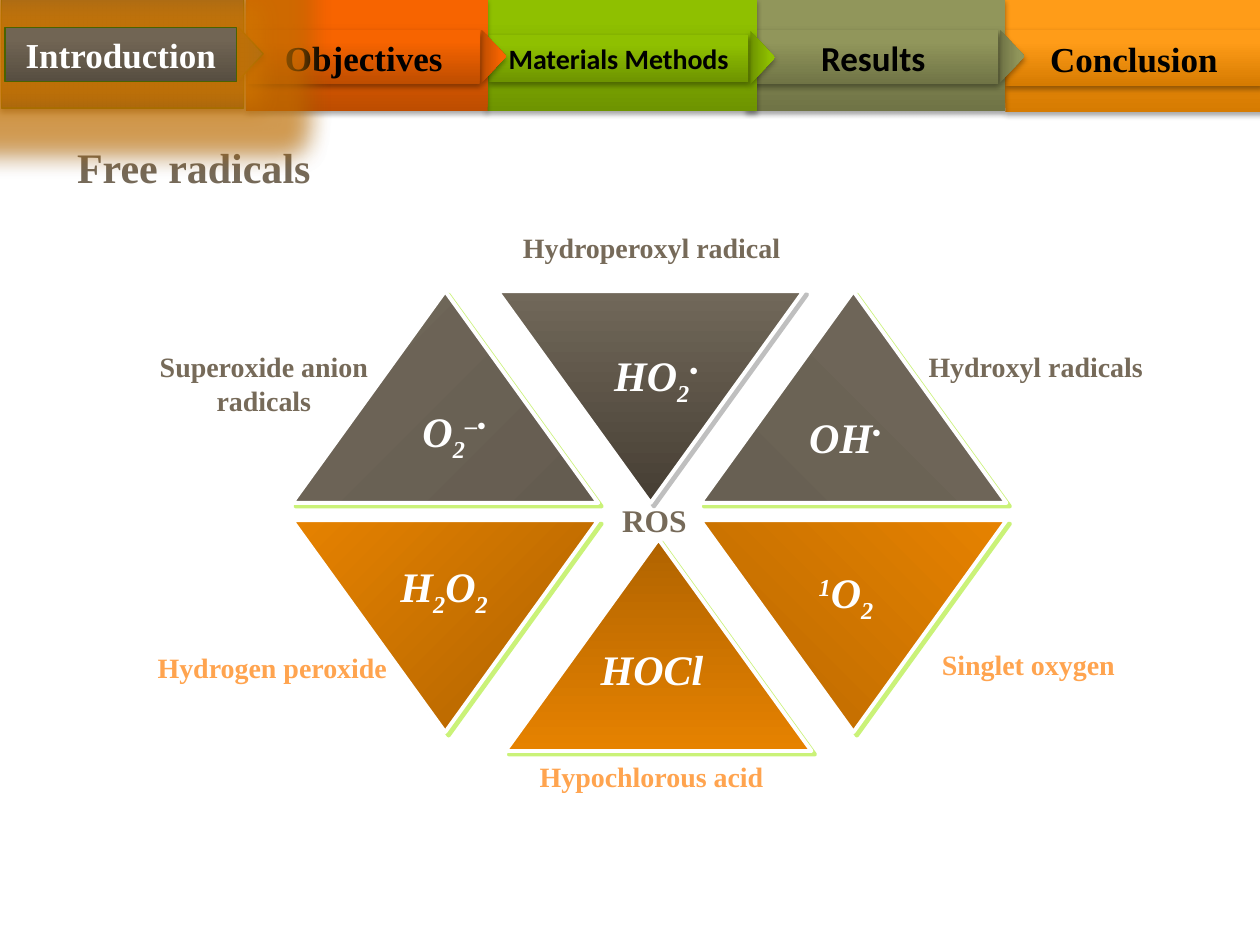
"""Build the free radicals slide with its section navigation bar."""
from lxml import etree
from pptx import Presentation
from pptx import util as u
from pptx.dml.color import RGBColor
from pptx.enum import shapes, text
from pptx.oxml import ns

WHITE = RGBColor(0xFF, 0xFF, 0xFF)
BLACK = RGBColor(0, 0, 0)
TAUPE = RGBColor(0x76, 0x6A, 0x59)
PEACH = RGBColor(0xFF, 0xA4, 0x4F)
LIME = RGBColor(0xCA, 0xF2, 0x78)
GREY = RGBColor(0x80, 0x80, 0x80)
DARK_GREEN = RGBColor(0x4A, 0x63, 0x00)
GLOW = RGBColor(0xD6, 0x7B, 0x01)
SERIF, SANS = "Times New Roman", "Calibri"
SUB, SUPER = -25, 30
RECTANGLE = shapes.MSO_SHAPE.RECTANGLE
TRIANGLE = shapes.MSO_SHAPE.ISOSCELES_TRIANGLE
TRIANGLE_SIZE = (6.17, 4.27)
PANEL_HEIGHT = 2.26

ORANGE = [(0, "D67B01"), (80, "FF9C18"), (100, "FF9D19")]
OLIVE = [(0, "707446"), (80, "91965B"), (100, "93985A")]
GREEN = [(0, "6E9400"), (80, "8FC000"), (100, "90C100")]
RED = [(0, "BE4D00"), (80, "F76400"), (100, "F86400")]
BROWN = [(0, "574E41"), (80, "716554"), (100, "726654")]

TRIANGLES = [
    (5.89, 10.49, True, "E68200", "AC6100", 315, LIME),
    (14.12, 5.87, False, "686053", "71685A", 315, LIME),
    (5.89, 5.87, False, "71685A", "645C50", 45, LIME),
    (10.03, 5.87, True, "463E33", "71685A", 90, GREY),
    (10.19, 10.87, False, "B06300", "E68200", 90, LIME),
    (14.12, 10.49, True, "B86800", "E68200", 45, LIME),
]
FORMULAS = [
    (11.56, 6.93, [("HO", 0), ("2", SUB), ("•", SUPER)]),
    (7.29, 11.18, [("H", 0), ("2", SUB), ("O", 0), ("2", SUB)]),
    (15.39, 11.3, [("1", SUPER), ("O", 0), ("2", SUB)]),
    (11.48, 12.85, [("HOCl", 0)]),
    (7.49, 8.05, [("O", 0), ("2", SUB), ("‒•", SUPER)]),
    (15.37, 8.18, [("OH", 0), ("•", SUPER)]),
]
NAMES = [
    ("Superoxide anion radicals", (2.49, 6.93, 5.66, 1.63), TAUPE),
    ("Hydroxyl radicals", (18.06, 6.93, 5.64, 0.94), TAUPE),
    ("Hydrogen peroxide", (2.67, 12.98, 5.64, 0.94), PEACH),
    ("Singlet oxygen", (17.91, 12.93, 5.64, 0.94), PEACH),
    ("Hydroperoxyl radical", (9.73, 4.52, 6.81, 0.94), TAUPE),
    ("Hypochlorous acid", (9.73, 15.19, 6.81, 0.94), PEACH),
]
SECTIONS = [
    ("Conclusion", ORANGE, (20.27, 0, 5.21), (20.27, 0.61, 5.18, 1.12), 20, SERIF),
    ("Results", OLIVE, (15.04, -0.03, 5.23), (15.09, 0.61, 5.03, 1.09), 20, SANS),
    ("Materials Methods", GREEN, (9.8, -0.03, 5.46), (9.86, 0.71, 5.23, 0.94), 16, SANS),
    ("Objectives", RED, (4.95, -0.03, 4.88), (5, 0.61, 4.67, 1.09), 20, SERIF),
    ("Introduction", BROWN, (0.03, -0.08, 4.88), (0.1, 0.56, 4.67, 1.09), 20, SERIF),
]


def add_node(parent, tag, **attributes):
    node = etree.SubElement(parent, ns.qn(tag))
    for name, value in attributes.items():
        node.set(name, str(value))
    return node


class SlideBuilder:
    def __init__(self, slide):
        self.slide = slide

    def format_runs(self, paragraph, size, color, font=SERIF, italic=False):
        for run in paragraph.runs:
            run.font.name = font
            run.font.size = u.Pt(size)
            run.font.bold = True
            run.font.italic = italic
            run.font.color.rgb = color

    def title(self, wording, box):
        shape = self.slide.shapes.title
        shape.left, shape.top, shape.width, shape.height = map(u.Cm, box)
        frame = shape.text_frame
        frame.text = wording
        frame.word_wrap = False
        frame.vertical_anchor = text.MSO_ANCHOR.TOP
        frame.paragraphs[0].alignment = text.PP_ALIGN.LEFT
        self.format_runs(frame.paragraphs[0], 24, TAUPE)

    def label(self, wording, box, size, color, wrap=True):
        frame = self.slide.shapes.add_textbox(*map(u.Cm, box)).text_frame
        frame.text = wording
        frame.word_wrap = wrap
        if wrap:
            frame.paragraphs[0].alignment = text.PP_ALIGN.CENTER
        self.format_runs(frame.paragraphs[0], size, color)

    def formula(self, left, top, parts):
        frame = self.slide.shapes.add_textbox(*map(u.Cm, (left, top, 3.33, 1.27))).text_frame
        frame.word_wrap = True
        paragraph = frame.paragraphs[0]
        paragraph.alignment = text.PP_ALIGN.CENTER
        for wording, baseline in parts:
            run = paragraph.add_run()
            run.text = wording
            if baseline:
                run._r.get_or_add_rPr().set("baseline", str(baseline * 1000))
        self.format_runs(paragraph, 24, WHITE, italic=True)

    def gradient_shape(self, kind, box, stops, angle, line=None, line_width=0.75):
        shape = self.slide.shapes.add_shape(kind, *map(u.Cm, box))
        shape.fill.gradient()
        gradient = shape._element.spPr.find(ns.qn("a:gradFill"))
        for child in list(gradient):
            gradient.remove(child)
        stop_list = add_node(gradient, "a:gsLst")
        for position, color in stops:
            stop = add_node(stop_list, "a:gs", pos=position * 1000)
            add_node(stop, "a:srgbClr", val=color)
        add_node(gradient, "a:lin", ang=angle * 60000, scaled=0)
        if line is None:
            shape.line.fill.background()
        else:
            shape.line.color.rgb = line
            shape.line.width = u.Pt(line_width)
        shape.shadow.inherit = False
        return shape

    def effect(self, shape, tag, color, opacity, **attributes):
        effects = shape._element.spPr.find(ns.qn("a:effectLst"))
        node = add_node(effects, tag, **attributes)
        color_node = add_node(node, "a:srgbClr", val=color)
        add_node(color_node, "a:alpha", val=opacity * 1000)

    def shadow(self, shape, color, opacity, blur, distance, angle):
        self.effect(shape, "a:outerShdw", color, opacity, blurRad=u.Pt(blur),
                    dist=u.Pt(distance), dir=angle * 60000, rotWithShape=0)

    def triangle(self, left, top, flipped, first, last, angle, shadow_color):
        shape = self.gradient_shape(TRIANGLE, (left, top, *TRIANGLE_SIZE),
                                    [(0, first), (100, last)], angle, WHITE, 2.25)
        if flipped:
            shape._element.spPr.xfrm.set("flipV", "1")
        self.shadow(shape, shadow_color, 50 if shadow_color == GREY else 100, 0, 2.8, 45)

    def section(self, wording, stops, panel, bar, size, font):
        active = wording == "Introduction"
        line = DARK_GREEN if active else None
        left, top, width, height = bar
        pieces = [self.gradient_shape(RECTANGLE, (*panel, PANEL_HEIGHT), stops, 270, line)]
        if wording != "Conclusion":
            arrow_box = (left + width - 0.25, top + height / 2 - 0.27, 1.07, 0.5)
            arrow = self.gradient_shape(TRIANGLE, arrow_box, stops, 270, line)
            arrow.rotation = 90
            pieces.append(arrow)
        shape = self.gradient_shape(RECTANGLE, bar, stops, 270, line)
        if active:
            self.effect(shape, "a:glow", GLOW, 60, rad=u.Pt(28))
        for piece in pieces + [shape]:
            self.shadow(piece, BLACK, 35, 3.1, 1.8, 90)
        frame = shape.text_frame
        frame.text = wording
        frame.word_wrap = True
        frame.paragraphs[0].alignment = text.PP_ALIGN.CENTER
        self.format_runs(frame.paragraphs[0], size, WHITE if active else BLACK, font)


def main():
    presentation = Presentation()
    presentation.slide_width, presentation.slide_height = u.Cm(25.4), u.Cm(19.05)
    builder = SlideBuilder(presentation.slides.add_slide(presentation.slide_layouts[5]))
    builder.title("Free radicals", (1.3, 2.72, 5.49, 1.27))
    for triangle in TRIANGLES:
        builder.triangle(*triangle)
    for formula in FORMULAS:
        builder.formula(*formula)
    for wording, box, color in NAMES:
        builder.label(wording, box, 16, color)
    for section in SECTIONS:
        builder.section(*section)
    builder.label("ROS", (12.29, 9.98, 1.83, 1.02), 18, TAUPE, wrap=False)
    presentation.save("out.pptx")


if __name__ == "__main__":
    main()
